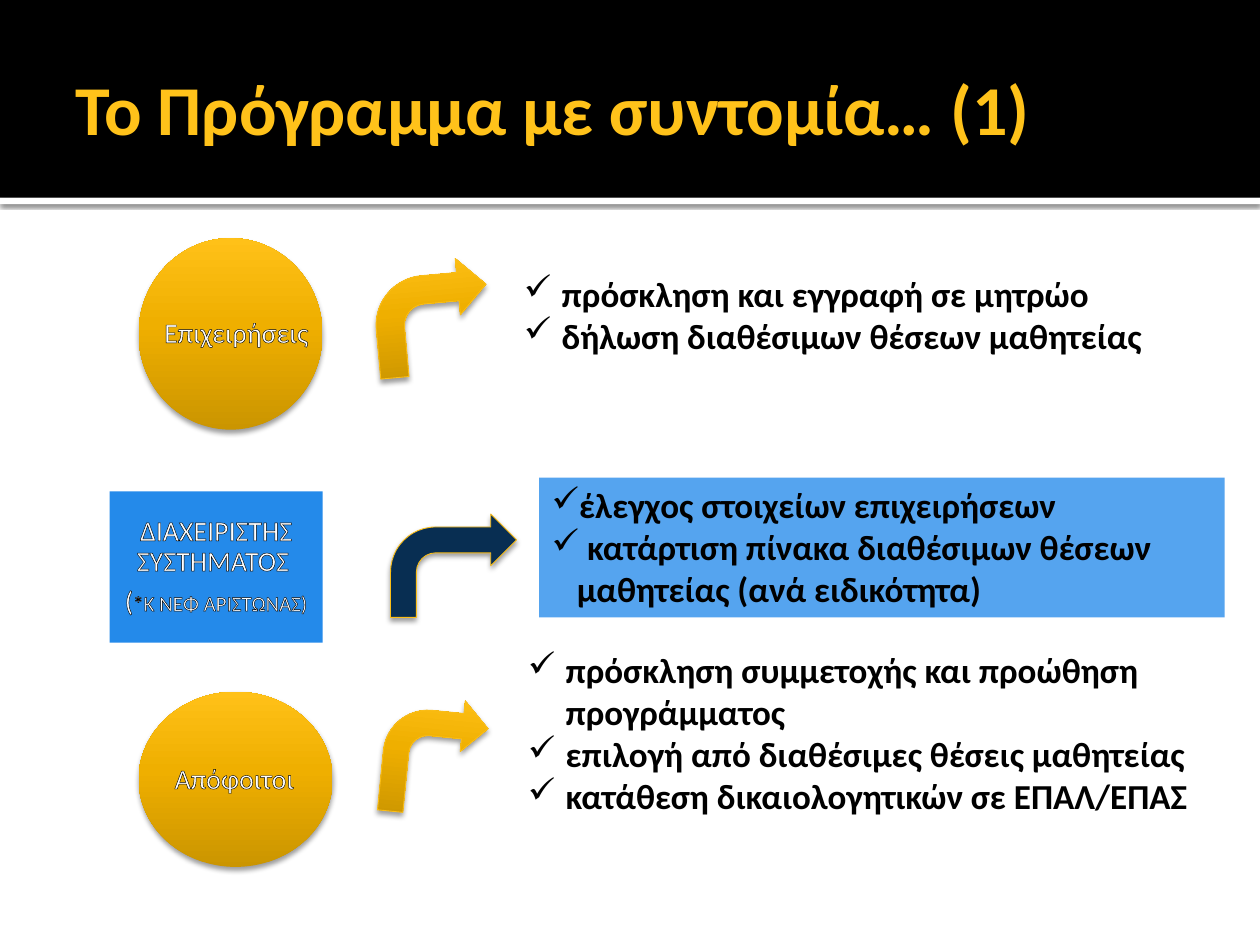
from dataclasses import dataclass

from lxml.etree import SubElement
from pptx import Presentation
from pptx.dml.color import RGBColor
from pptx.enum.shapes import MSO_SHAPE
from pptx.enum.text import MSO_ANCHOR, PP_ALIGN
from pptx.oxml.ns import qn
from pptx.util import Inches, Pt


@dataclass(frozen=True)
class Theme:
    """Hold the colours and type sizes of the slide."""

    font: str = "Calibri"
    white: str = "FFFFFF"
    black: str = "000000"
    gold: str = "FFC21A"
    edge: str = "FBBE18"
    navy: str = "082E52"
    blue: str = "248AEA"
    sky: str = "55A4EF"
    fade: tuple = ((0, "CB9500"), (55, "EFAF00"), (100, "FFC118"))
    head: int = 40
    body: int = 20
    label: int = 16
    small: int = 12


THEME = Theme()
COLS, ROWS = 100, 75
UNIT = Inches(0.1)


def grid(*cells):
    """Turn grid columns and rows into lengths."""
    return [round(cell * UNIT) for cell in cells]


def tint(parent, color):
    """Add an RGB colour element and return it."""
    return SubElement(parent, qn("a:srgbClr"), val=color)


def shade(shape, alpha, blur, dist):
    """Give a shape a soft shadow that falls downward."""
    effects = SubElement(shape.element.spPr, qn("a:effectLst"))
    outer = SubElement(effects, qn("a:outerShdw"), blurRad=str(Pt(blur)),
                       dist=str(Pt(dist)), dir="5400000", rotWithShape="0")
    SubElement(tint(outer, THEME.black), qn("a:alpha"), val=str(alpha * 1000))


def paint(shape, color):
    """Fill a shape with a plain colour, or with the gold fade if none."""
    if color:
        shape.fill.solid()
        shape.fill.fore_color.rgb = RGBColor.from_string(color)
        return
    shape.fill.gradient()
    shape.fill.gradient_angle = 90
    stops = shape.element.spPr.find(".//" + qn("a:gsLst"))
    for stop in list(stops):
        stops.remove(stop)
    for place, shade_color in THEME.fade:
        tint(SubElement(stops, qn("a:gs"), pos=str(place * 1000)), shade_color)


def add_form(shapes, kind, cells, color=None, edge=None, glow=None):
    """Add a preset shape with its fill, edge and shadow."""
    shape = shapes.add_shape(kind, *grid(*cells))
    paint(shape, color)
    if edge:
        shape.line.color.rgb = RGBColor.from_string(edge)
        shape.line.width = Pt(0.5)
    else:
        shape.line.fill.background()
    if glow:
        shade(shape, *glow)
    else:
        shape.shadow.inherit = False
    return shape


def style(run, size, color, bold=False):
    """Set the font of a run."""
    run.font.name = THEME.font
    run.font.size = Pt(size)
    run.font.bold = bold
    run.font.color.rgb = RGBColor.from_string(color)


def trace(run):
    """Outline the letters of a run in black."""
    line = SubElement(run.font._element, qn("a:ln"), w="0")
    tint(SubElement(line, qn("a:solidFill")), THEME.black)
    run.font._element.insert(0, line)


def set_label(shape, lines):
    """Write centred, outlined lines of (text, size) runs in a shape."""
    frame = shape.text_frame
    frame.word_wrap = True
    frame.vertical_anchor = MSO_ANCHOR.MIDDLE
    frame.margin_left = frame.margin_right = Inches(0.02)
    frame.margin_top = frame.margin_bottom = Inches(0.02)
    for i, line in enumerate(lines):
        para = frame.add_paragraph() if i else frame.paragraphs[0]
        para.alignment = PP_ALIGN.CENTER
        para.line_spacing = 0.9
        para.space_after = Pt(0.35 * THEME.label)
        for text, size in line:
            run = para.add_run()
            run.text = text
            style(run, size, THEME.white)
            trace(run)


def set_list(shape, items, indent):
    """Write ticked items with a hanging indent in a shape."""
    frame = shape.text_frame
    frame.word_wrap = True
    frame.vertical_anchor = MSO_ANCHOR.TOP
    frame.text = "\n".join(items)
    for para in frame.paragraphs:
        para.alignment = PP_ALIGN.LEFT
        props = para._p.get_or_add_pPr()
        props.set("marL", str(Inches(indent)))
        props.set("indent", str(-Inches(indent)))
        SubElement(props, qn("a:buChar"), char="✓")
        style(para.runs[0], THEME.body, THEME.black, True)


def add_list(shapes, cells, items):
    """Add a text box of ticked items."""
    set_list(shapes.add_textbox(*grid(*cells)), items, 0.3)


def add_disc(shapes, cells, text, spot):
    """Add a golden disc grouped with its label."""
    group = shapes.add_group_shape().shapes
    add_form(group, MSO_SHAPE.OVAL, cells, glow=(38, 3.1, 2))
    set_label(group.add_textbox(*grid(*spot)), [[(text, THEME.label)]])


def add_arrow(shapes, cells, turn=0, color=None):
    """Add a bent arrow."""
    arrow = add_form(shapes, MSO_SHAPE.BENT_ARROW, cells, color,
                     THEME.edge, (38, 3.1, 2))
    arrow.rotation = turn


def add_head(slide, text):
    """Add the black band and set the title on it."""
    band = 15.7
    add_form(slide.shapes, MSO_SHAPE.RECTANGLE, (0, band, COLS, 0.5),
             THEME.white, glow=(60, 2.5, 0.8))
    add_form(slide.shapes, MSO_SHAPE.RECTANGLE, (0, 0, COLS, band), THEME.black)
    title = slide.shapes.title
    title.left, title.top, title.width, title.height = grid(5, 1.7, 90, 13.7)
    frame = title.text_frame
    frame.text = text
    frame.vertical_anchor = MSO_ANCHOR.MIDDLE
    frame.margin_right = Inches(0.05)
    frame.paragraphs[0].alignment = PP_ALIGN.LEFT
    style(frame.paragraphs[0].runs[0], THEME.head, THEME.gold, True)
    title.element.getparent().append(title.element)


def main():
    """Build and save the slide."""
    deck = Presentation()
    deck.slide_width, deck.slide_height = grid(COLS, ROWS)
    slide = deck.slides.add_slide(deck.slide_layouts[5])
    shapes = slide.shapes
    add_head(slide, "Το Πρόγραμμα με συντομία… (1)")

    add_arrow(shapes, (29.8, 20.7, 9, 9), 354.8)
    add_disc(shapes, (11, 18.9, 14.6, 15.2), "Επιχειρήσεις",
             (12.5, 21.1, 12.5, 10.8))
    add_list(shapes, (40.6, 21.1, 54.4, 7.7), [
        "πρόσκληση και εγγραφή σε μητρώο",
        "δήλωση διαθέσιμων θέσεων μαθητείας"])

    add_disc(shapes, (11, 54.9, 15.4, 13.9), "Απόφοιτοι",
             (12, 57, 13.2, 9.8))
    add_arrow(shapes, (30.4, 55.4, 8.1, 9.3), 5.7)
    add_list(shapes, (40.9, 51, 56.2, 17.8), [
        "πρόσκληση συμμετοχής και προώθηση προγράμματος",
        "επιλογή από διαθέσιμες θέσεις μαθητείας",
        "κατάθεση δικαιολογητικών σε ΕΠΑΛ/ΕΠΑΣ"])

    desk = add_form(shapes, MSO_SHAPE.RECTANGLE, (8.7, 39, 16.9, 12), THEME.blue)
    set_label(desk, [
        [("ΔΙΑΧΕΙΡΙΣΤΗΣ ΣΥΣΤΗΜΑΤΟΣ ", THEME.label)],
        [("(", THEME.label), ("*Κ ΝΕΦ ΑΡΙΣΤΩΝΑΣ)", THEME.small)]])
    add_arrow(shapes, (31, 40.8, 10, 8.2), color=THEME.navy)
    panel = add_form(shapes, MSO_SHAPE.RECTANGLE, (42.8, 37.9, 54.4, 11.1),
                     THEME.sky)
    set_list(panel, [
        "έλεγχος στοιχείων επιχειρήσεων",
        " κατάρτιση πίνακα διαθέσιμων θέσεων μαθητείας (ανά ειδικότητα)"], 0.2)
    deck.save("out.pptx")


if __name__ == "__main__":
    main()
